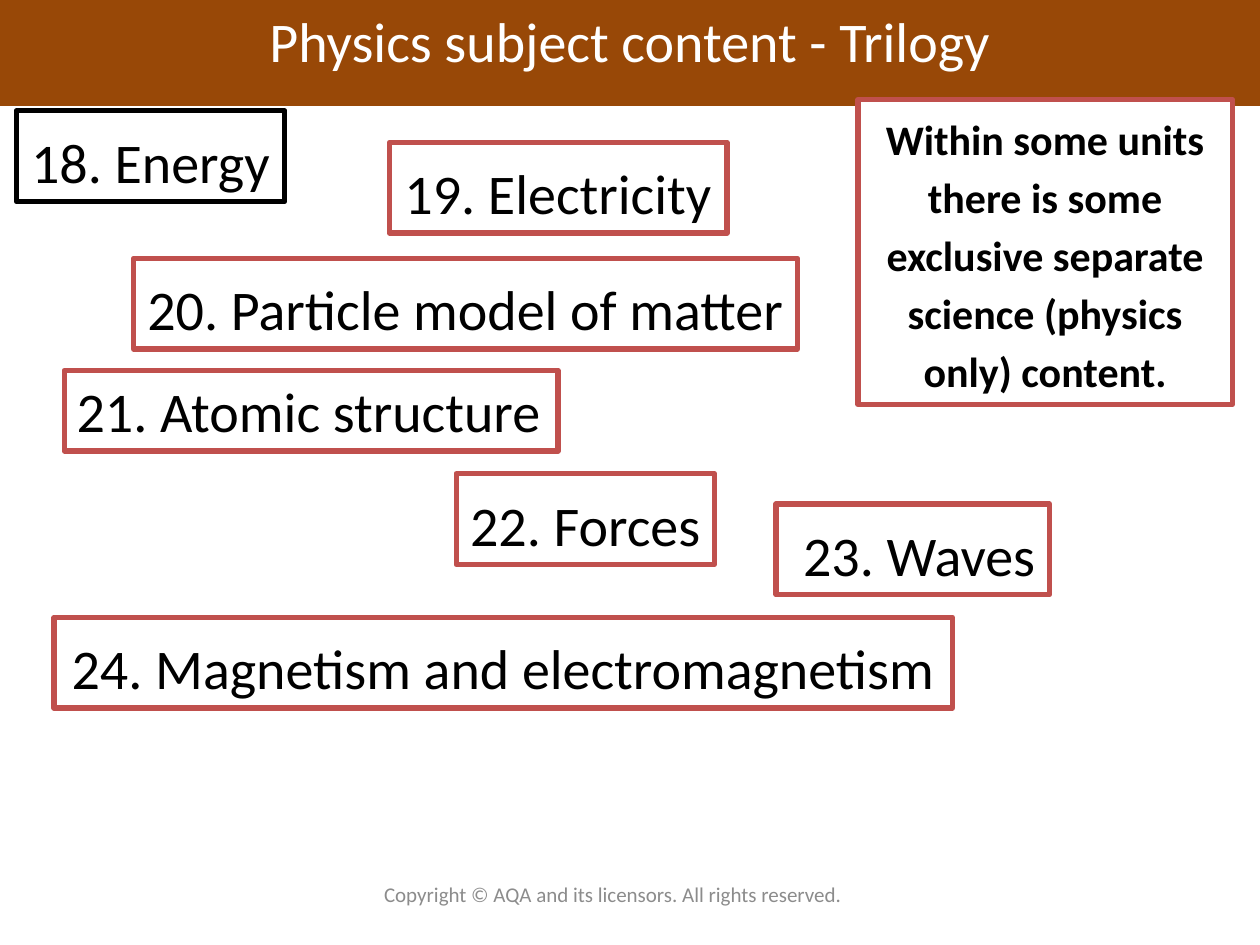
from dataclasses import dataclass

from pptx import Presentation
from pptx.dml.color import RGBColor
from pptx.enum import shapes, text
from pptx.util import Inches, Pt

FONT = "Calibri"
COLOURS = {
    "banner": "984807",
    "frame": "C0504D",
    "first_frame": "000000",
    "paper": "FFFFFF",
    "ink": "000000",
    "footer": "8C8C8C",
}


@dataclass(frozen=True)
class Label:
    words: str
    left: float
    top: float
    width: float
    height: float = 0.72
    frame: str = "frame"
    size: int = 32
    bold: bool = False
    wrap: bool = False
    centred: bool = True
    spacing: float = 1.15


LABELS = [
    Label("18. Energy", 0.13, 0.88, 2.13, frame="first_frame"),
    Label("19. Electricity", 3.09, 1.13, 2.68),
    Label("20. Particle model of matter", 1.06, 2.05, 5.27),
    Label("21. Atomic structure", 0.51, 2.94, 3.92, 0.64, centred=False, spacing=1.0),
    Label("22. Forces", 3.62, 3.76, 2.05),
    Label(" 23. Waves", 6.16, 4, 2.17),
    Label("24. Magnetism and electromagnetism", 0.43, 4.9, 7.13),
    Label(
        "Within some units there is some exclusive separate science "
        "(physics only) content.",
        6.81, 0.79, 2.97, 2.42, size=24, bold=True, wrap=True,
    ),
]


def colour(name: str) -> RGBColor:
    return RGBColor.from_string(COLOURS[name])


def place(box, left: float, top: float, width: float, height: float) -> None:
    box.left, box.top = Inches(left), Inches(top)
    box.width, box.height = Inches(width), Inches(height)


def paint(box, fill: str, line: str, weight: float) -> None:
    box.fill.solid()
    box.fill.fore_color.rgb = colour(fill)
    box.line.color.rgb = colour(line)
    box.line.width = Pt(weight)


def write(box, words: str, *, size: int, ink: str = "ink", bold: bool = False,
          wrap: bool = True, centred: bool = True, spacing: float = 1.0,
          anchor=text.MSO_ANCHOR.TOP, fit=text.MSO_AUTO_SIZE.SHAPE_TO_FIT_TEXT) -> None:
    frame = box.text_frame
    frame.word_wrap = wrap
    frame.auto_size = fit
    frame.vertical_anchor = anchor
    para = frame.paragraphs[0]
    para.alignment = text.PP_ALIGN.CENTER if centred else text.PP_ALIGN.LEFT
    para.line_spacing = spacing
    span = para.add_run()
    span.text = words
    span.font.name = FONT
    span.font.size = Pt(size)
    span.font.bold = bold
    span.font.color.rgb = colour(ink)


def draw_label(page, label: Label) -> None:
    box = page.shapes.add_shape(shapes.MSO_SHAPE.RECTANGLE, 0, 0, 0, 0)
    place(box, label.left, label.top, label.width, label.height)
    box.shadow.inherit = False
    paint(box, "paper", label.frame, 3)
    write(box, label.words, size=label.size, bold=label.bold, wrap=label.wrap,
          centred=label.centred, spacing=label.spacing)


def main() -> None:
    deck = Presentation()
    deck.slide_width, deck.slide_height = Inches(10), Inches(7.5)
    page = deck.slides.add_slide(deck.slide_layouts[5])

    title = page.shapes.title
    place(title, 0, 0, 10, 0.64)
    paint(title, "banner", "banner", 0.75)
    write(title, "Physics subject content - Trilogy", size=32, ink="paper")

    for label in LABELS:
        draw_label(page, label)

    footer = page.shapes.add_textbox(0, 0, 0, 0)
    place(footer, 2.15, 7.03, 5.43, 0.14)
    write(footer, "Copyright © AQA and its licensors. All rights reserved.",
          size=12, ink="footer", anchor=text.MSO_ANCHOR.MIDDLE,
          fit=text.MSO_AUTO_SIZE.NONE)

    deck.save("out.pptx")


if __name__ == "__main__":
    main()
